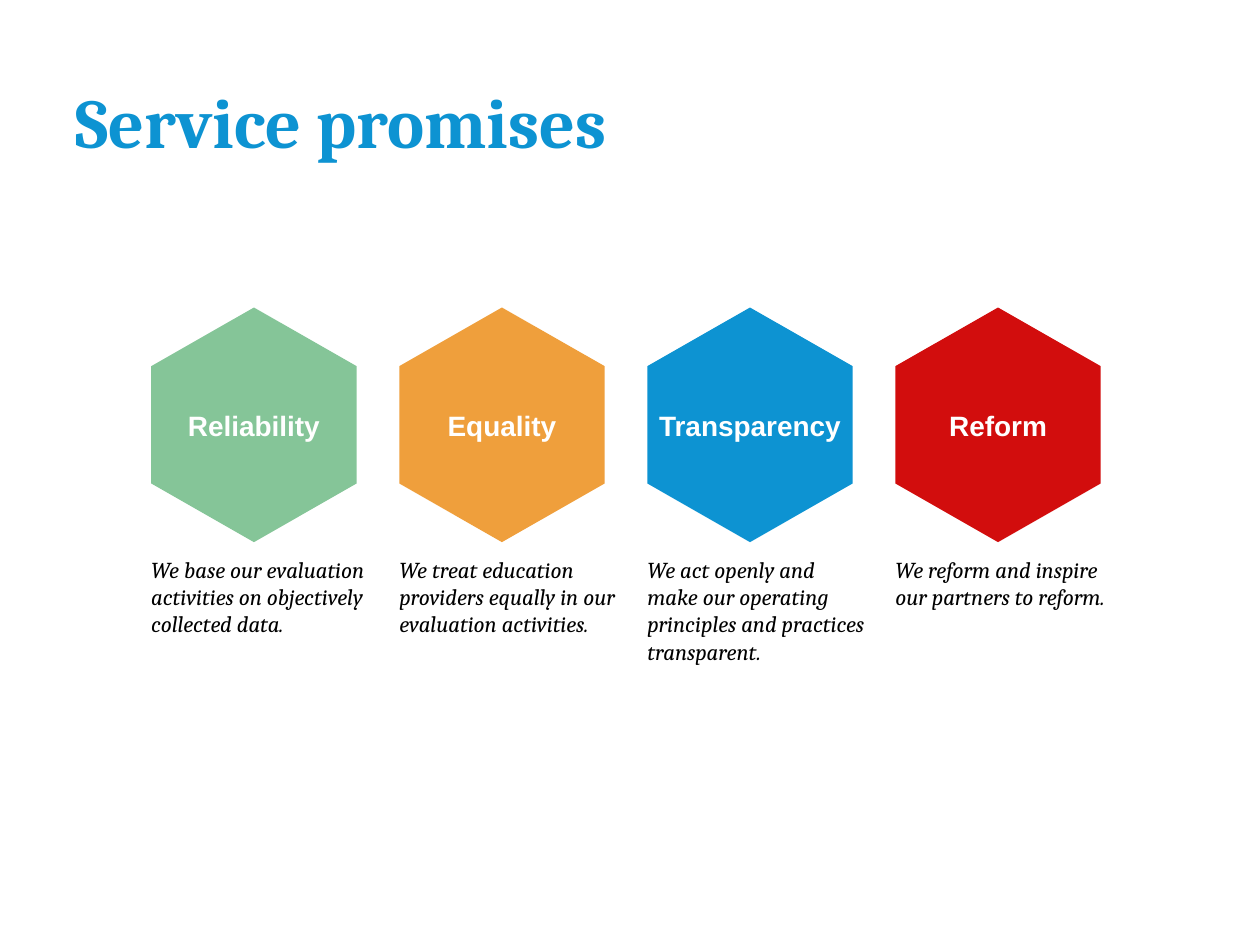
from dataclasses import dataclass

from pptx import Presentation
from pptx.dml.color import RGBColor
from pptx.enum.text import MSO_ANCHOR, PP_ALIGN
from pptx.util import Cm, Pt

LEFT, CENTER = PP_ALIGN.LEFT, PP_ALIGN.CENTER
TOP, MIDDLE = MSO_ANCHOR.TOP, MSO_ANCHOR.MIDDLE


@dataclass(frozen=True)
class Theme:
    """Colours, fonts and type sizes of the slide."""
    blue: str = "0D93D2"
    green: str = "85C598"
    orange: str = "EF9F3C"
    red: str = "D20D0D"
    white: str = "FFFFFF"
    black: str = "000000"
    serif: str = "Cambria"
    sans: str = "Arial"
    title_size: int = 40
    label_size: int = 16
    caption_size: int = 13


THEME = Theme()
PROMISES = [
    ("Reliability", THEME.green,
     "We base our evaluation activities on objectively collected data."),
    ("Equality", THEME.orange,
     "We treat education providers equally in our evaluation activities."),
    ("Transparency", THEME.blue,
     "We act openly and make our operating principles and practices transparent."),
    ("Reform", THEME.red,
     "We reform and inspire our partners to reform."),
]


def write(shape, text, font, size, color, align=LEFT, anchor=TOP,
          inset=(0, 0), bold=False, italic=False):
    """Write one styled run, with side and top insets in centimetres."""
    frame = shape.text_frame
    frame.word_wrap = True
    frame.vertical_anchor = anchor
    frame.margin_left = frame.margin_right = Cm(inset[0])
    frame.margin_top = frame.margin_bottom = Cm(inset[1])
    para = frame.paragraphs[0]
    para.alignment = align
    span = para.add_run()
    span.text = text
    span.font.name = font
    span.font.size = Pt(size)
    span.font.bold = bold
    span.font.italic = italic
    span.font.color.rgb = RGBColor.from_string(color)


def add_title(page, left, top, width, height):
    """Place the slide title in the given box."""
    box = page.shapes.add_textbox(Cm(left), Cm(top), Cm(width), Cm(height))
    write(box, "Service promises", THEME.serif, THEME.title_size, THEME.blue,
          inset=(0.25, 0.13), bold=True)


def add_hexagon(page, left, top, width, height, label, color):
    """Draw a pointed-top hexagon that fills the box and carries a label."""
    corners = [(1, 0.25), (0.5, 0), (0, 0.25), (0, 0.75), (0.5, 1), (1, 0.75)]
    points = [(Cm(left + x * width), Cm(top + y * height)) for x, y in corners]
    builder = page.shapes.build_freeform(*points[0])
    builder.add_line_segments(points[1:], close=True)
    hexagon = builder.convert_to_shape()
    hexagon.shadow.inherit = False
    hexagon.fill.solid()
    hexagon.fill.fore_color.rgb = RGBColor.from_string(color)
    hexagon.line.fill.background()
    write(hexagon, label, THEME.sans, THEME.label_size, THEME.white,
          CENTER, MIDDLE, inset=(0.1, 0.13), bold=True)


def add_promise(page, left, top, width, height, label, color, caption):
    """Place a hexagon with its caption below it."""
    hexagon_height = 4.73
    caption_top = hexagon_height + 0.07
    add_hexagon(page, left, top, width - 0.26, hexagon_height, label, color)
    box = page.shapes.add_textbox(Cm(left), Cm(top + caption_top),
                                  Cm(width), Cm(height - caption_top))
    write(box, caption, THEME.serif, THEME.caption_size, THEME.black,
          inset=(0, 0.2), italic=True)


def add_promise_row(page, left, top, width, height):
    """Spread the promises evenly across the given box."""
    column = 4.4
    pitch = (width - column) / (len(PROMISES) - 1)
    for index, (label, color, caption) in enumerate(PROMISES):
        add_promise(page, left + index * pitch, top, column, height,
                    label, color, caption)


def main():
    """Build and save the slide."""
    deck = Presentation()
    deck.slide_width, deck.slide_height = Cm(25.4), Cm(19.05)
    page = deck.slides.add_slide(deck.slide_layouts[6])
    add_title(page, 1.27, 1.45, 22.35, 3.33)
    add_promise_row(page, 3.05, 6.2, 19.4, 7.67)
    deck.save("out.pptx")


if __name__ == "__main__":
    main()
